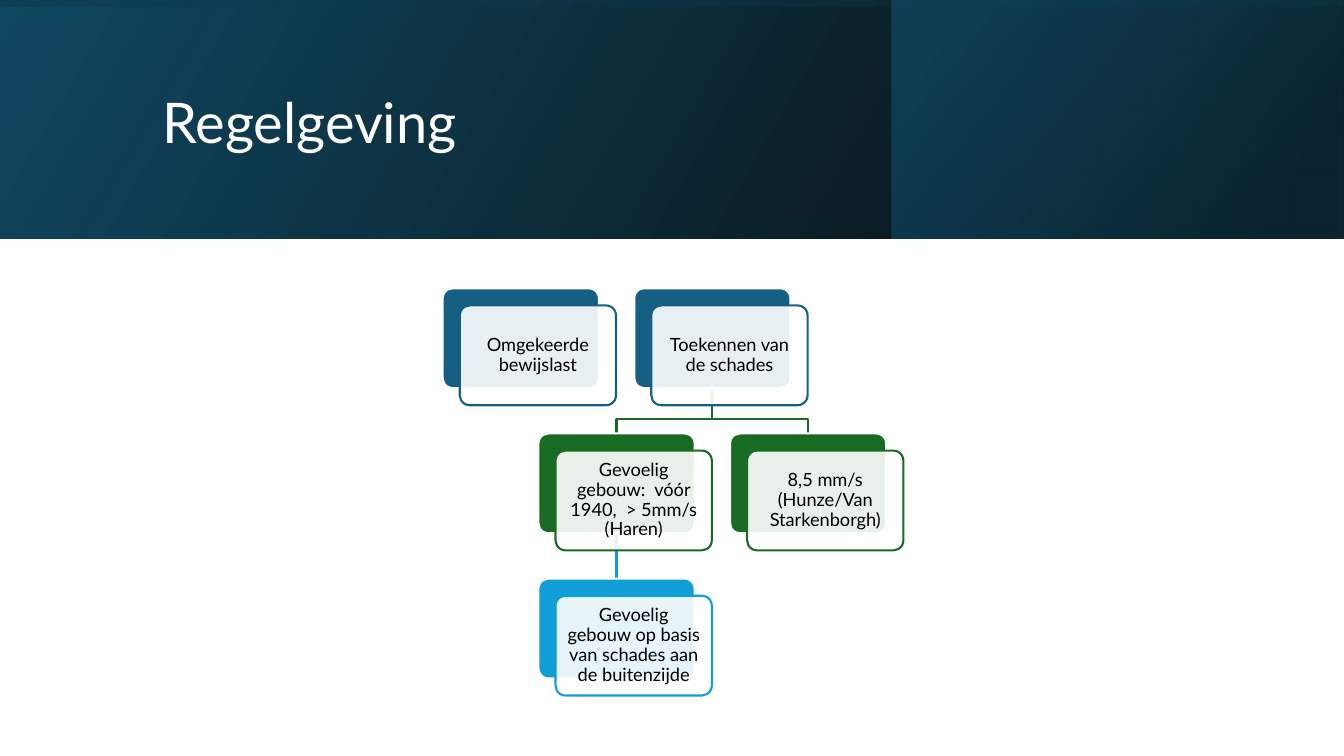
import pptx
import pptx.dml.color
import pptx.enum.shapes
import pptx.enum.text
import pptx.util
from lxml import etree
from pptx.oxml.ns import qn

Inches = pptx.util.Inches
Pt = pptx.util.Pt
RGBColor = pptx.dml.color.RGBColor
SHAPE = pptx.enum.shapes.MSO_SHAPE
ALIGN = pptx.enum.text.PP_ALIGN
ANCHOR = pptx.enum.text.MSO_ANCHOR

BLACK = RGBColor(0x00, 0x00, 0x00)
WHITE = RGBColor(0xFF, 0xFF, 0xFF)
NAVY = RGBColor(0x10, 0x48, 0x62)
DARK_TEAL = RGBColor(0x0B, 0x30, 0x41)
TEAL = RGBColor(0x15, 0x60, 0x82)
GREEN = RGBColor(0x19, 0x6B, 0x24)
SKY = RGBColor(0x0F, 0x9E, 0xD5)

# Card grid: half columns are allowed
CARD_W, CARD_H = 1.55, 0.99
GRID_LEFT, GRID_TOP = 4.39, 2.86
COLUMN_STEP, ROW_STEP = 1.9, 1.44
FRONT_SHIFT = 0.17
BEND_DROP = 0.31


def write_text(frame, text, *, size, color, font="Lato", align=ALIGN.LEFT, inset=0.1):
    frame.word_wrap = True
    frame.auto_size = pptx.enum.text.MSO_AUTO_SIZE.NONE
    frame.vertical_anchor = ANCHOR.MIDDLE
    frame.margin_left = frame.margin_right = Inches(inset)
    frame.margin_top = frame.margin_bottom = Inches(0.05)
    para = frame.paragraphs[0]
    para.alignment = align
    para.line_spacing = 0.9
    span = para.add_run()
    span.text = text
    span.font.size = Pt(size)
    span.font.name = font
    span.font.color.rgb = color


def set_opacity(color_parent, percent):
    color = color_parent.find(qn("a:srgbClr"))
    etree.SubElement(color, qn("a:alpha")).set("val", str(percent * 1000))


class SlideBuilder:
    line_width = 1.5
    text_size = 13

    def __init__(self, slide):
        self.slide = slide
        self.shapes = slide.shapes

    def add_box(self, kind, left, top, width, height):
        box = self.shapes.add_shape(
            kind, Inches(left), Inches(top), Inches(width), Inches(height))
        box.shadow.inherit = False
        return box

    def add_gradient(self, left, top, width, height, stops, angle, rotation=0):
        """Mirrored gradient panel; stops are (position, colour, opacity)."""
        box = self.add_box(SHAPE.RECTANGLE, left, top, width, height)
        box.line.fill.background()
        box.rotation = rotation
        box._element.spPr.find(qn("a:xfrm")).set("flipH", "1")
        box.fill.gradient()
        box.fill.gradient_angle = 360 - angle
        for stop, (position, color, opacity) in zip(box.fill.gradient_stops, stops):
            stop.position = position / 100
            stop.color.rgb = color
        elements = box._element.spPr.iter(qn("a:gs"))
        for element, (position, color, opacity) in zip(elements, stops):
            set_opacity(element, opacity)

    def add_title(self, text, left, top, width, height):
        title = self.shapes.title
        title.left, title.top = Inches(left), Inches(top)
        title.width, title.height = Inches(width), Inches(height)
        write_text(title.text_frame, text, size=40, color=WHITE)
        # Bring the title in front of the header panels
        self.shapes._spTree.append(title._element)

    def add_panel(self, left, top, fill, line):
        panel = self.add_box(SHAPE.ROUNDED_RECTANGLE, left, top, CARD_W, CARD_H)
        panel.adjustments[0] = 0.1
        panel.fill.solid()
        panel.fill.fore_color.rgb = fill
        panel.line.color.rgb = line
        panel.line.width = Pt(self.line_width)
        return panel

    def add_card(self, column, row, text, color):
        left = GRID_LEFT + column * COLUMN_STEP
        top = GRID_TOP + row * ROW_STEP
        self.add_panel(left, top, color, WHITE)
        front = self.add_panel(left + FRONT_SHIFT, top + FRONT_SHIFT, WHITE, color)
        set_opacity(front._element.spPr.find(qn("a:solidFill")), 90)
        write_text(front.text_frame, text, size=self.text_size, color=BLACK,
                   align=ALIGN.CENTER, inset=0.07)

    def add_branch(self, parent_column, child_column, parent_row, color):
        start_x, end_x = (GRID_LEFT + column * COLUMN_STEP + CARD_W / 2
                          for column in (parent_column, child_column))
        start_y = GRID_TOP + parent_row * ROW_STEP + CARD_H
        end_y = GRID_TOP + (parent_row + 1) * ROW_STEP
        if start_x == end_x:
            branch = self.shapes.add_connector(
                pptx.enum.shapes.MSO_CONNECTOR.STRAIGHT,
                Inches(start_x), Inches(start_y), Inches(end_x), Inches(end_y))
            etree.SubElement(branch._element.spPr, qn("a:effectLst"))
        else:
            bend_y = start_y + BEND_DROP
            path = self.shapes.build_freeform(Inches(start_x), Inches(start_y))
            path.add_line_segments(
                [(Inches(x), Inches(y)) for x, y in
                 ((start_x, bend_y), (end_x, bend_y), (end_x, end_y))], close=False)
            branch = path.convert_to_shape()
            branch.shadow.inherit = False
            branch.fill.background()
        branch.line.color.rgb = color
        branch.line.width = Pt(self.line_width)


def main():
    deck = pptx.Presentation()
    deck.slide_width, deck.slide_height = Inches(13.33), Inches(7.5)
    builder = SlideBuilder(deck.slides.add_slide(deck.slide_layouts[5]))

    # Header band
    builder.add_gradient(0, 0, 13.33, 2.37,
                         [(0, BLACK, 96), (100, NAVY, 100)], 330)
    builder.add_gradient(8.84, 0, 4.48, 2.37,
                         [(19, DARK_TEAL, 68), (100, TEAL, 48)], 320)
    builder.add_gradient(5.48, -5.48, 2.37, 13.33,
                         [(23, NAVY, 16), (99, BLACK, 45)], 350, rotation=270)
    builder.add_title("Regelgeving", 1.51, 0.38, 10.63, 1.72)

    # Branches: parent column, child column, parent row
    builder.add_branch(1, 1.5, 0, GREEN)
    builder.add_branch(0.5, 0.5, 1, SKY)
    builder.add_branch(1, 0.5, 0, GREEN)

    # Cards: column, row
    for column, row, text, color in (
        (0, 0, "Omgekeerde bewijslast", TEAL),
        (1, 0, "Toekennen van de schades", TEAL),
        (0.5, 1, "Gevoelig gebouw:  vóór 1940,  > 5mm/s (Haren)", GREEN),
        (0.5, 2, "Gevoelig gebouw op basis van schades aan de buitenzijde", SKY),
        (1.5, 1, "8,5 mm/s (Hunze/Van Starkenborgh)", GREEN),
    ):
        builder.add_card(column, row, text, color)

    deck.save("out.pptx")


if __name__ == "__main__":
    main()
